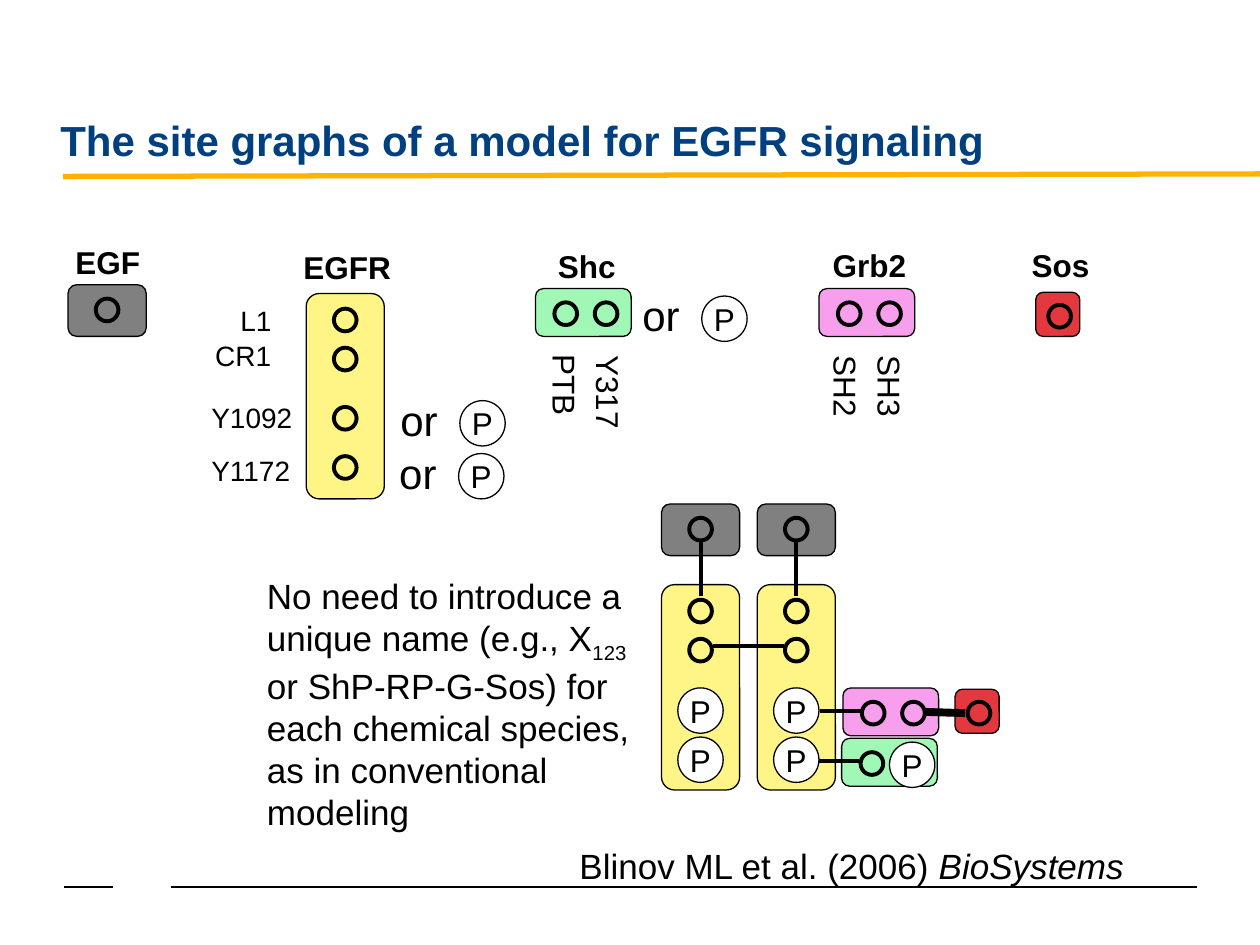
from lxml import etree
from pptx import Presentation
from pptx import util as u
from pptx.dml.color import RGBColor
from pptx.enum import shapes, text
from pptx.oxml.ns import qn

COLORS = {
    "black": "000000", "white": "FFFFFF", "title": "004080", "rule": "FFB300",
    "gray": "808080", "yellow": "FFF587", "green": "A0F7B6",
    "pink": "F79FED", "red": "E3383D",
}
FONT = "Arial"
SITE_SIZE, PHOSPHATE_SIZE = 0.18, 0.36

# Protein kinds: fill, size, centres of the binding sites within the body
PROTEINS = {
    "EGF": ("gray", (0.62, 0.41), [(0.31, 0.2)]),
    "EGFR": ("yellow", (0.62, 1.63),
             [(0.31, 0.21), (0.31, 0.52), (0.31, 0.99), (0.31, 1.38)]),
    "Shc": ("green", (0.76, 0.38), [(0.24, 0.2), (0.56, 0.2)]),
    "Grb2": ("pink", (0.76, 0.38), [(0.24, 0.2), (0.56, 0.2)]),
    "Sos": ("red", (0.35, 0.35), [(0.19, 0.19)]),
}

# Kind, left, top, indexes of phosphorylated sites
LEGEND = [
    ("EGF", 0.54, 2.26, ()), ("EGFR", 2.43, 2.33, ()), ("Shc", 4.25, 2.29, ()),
    ("Grb2", 6.5, 2.29, ()), ("Sos", 8.22, 2.32, ()),
]
COMPLEX = [
    ("EGFR", 5.25, 4.64, (2, 3)), ("EGF", 5.25, 4, ()),
    ("EGFR", 6.01, 4.64, (2, 3)), ("EGF", 6.01, 4, ()),
    ("Shc", 6.68, 5.86, (1,)), ("Grb2", 6.69, 5.46, ()), ("Sos", 7.58, 5.47, ()),
]

# Start, end, width in points
BONDS = [
    ((5.56, 4.29), (5.56, 4.73), 2.25), ((6.32, 4.29), (6.32, 4.73), 2.25),
    ((5.66, 5.13), (6.22, 5.13), 2.25), ((6.5, 6.04), (6.82, 6.04), 2.25),
    ((6.51, 5.64), (6.84, 5.64), 2.25), ((7.34, 5.65), (7.66, 5.66), 4.5),
]
RULES = [
    ((1.36, 7.04), (9.5, 7.04), 0.75, "black"),
    ((0.51, 7.04), (0.9, 7.04), 0.75, "black"),
    ((0.5, 1.4), (10, 1.38), 3, "rule"),
]

# Label, left, top, width
NAMES = [
    ("EGF", 0.5, 1.88, 0.72), ("EGFR", 2.31, 1.92, 0.92), ("Shc", 4.33, 1.91, 0.66),
    ("Grb2", 6.51, 1.9, 0.82), ("Sos", 8.09, 1.9, 0.66),
]
SITE_LABELS = [
    ("L1", 1.81, 2.36, 0.45), ("CR1", 1.61, 2.64, 0.65),
    ("Y1092", 1.58, 3.13, 0.84), ("Y1172", 1.58, 3.55, 0.84),
]
TURNED_LABELS = [
    ("PTB", 4.14, 2.86, 0.69), ("Y317", 4.42, 2.93, 0.82),
    ("SH2", 6.37, 2.87, 0.69), ("SH3", 6.72, 2.87, 0.69),
]
ALTERNATIVES = [(3.08, 3.08), (3.07, 3.5), (5, 2.25)]  # places of "or"
PHOSPHATE_OFFSET = (0.75, 0.28)  # from "or" to the centre of its P

TITLE = "The site graphs of a model for EGFR signaling"
NOTE = [
    ("No need to introduce a unique name (e.g., X", {}),
    ("123", {"baseline": "-25000"}),
    (" or ShP-RP-G-Sos) for each chemical species, as in conventional modeling", {}),
]
CITATION = [("Blinov ML et al. (2006) ", {}), ("BioSystems", {"i": "1"})]


def rgb(name):
    return RGBColor.from_string(COLORS[name])


def write(shape, runs, size, color="black", bold=False):
    paragraph = shape.text_frame.paragraphs[0]
    for words, attributes in runs:
        run = paragraph.add_run()
        run.text = words
        for key, value in {"name": FONT, "size": u.Pt(size), "bold": bold}.items():
            setattr(run.font, key, value)
        run.font.color.rgb = rgb(color)
        for key, value in attributes.items():
            run.font._element.set(key, value)
    return paragraph


def add_text(slide, runs, box, size, wrap=False, rotation=0, anchor="TOP", **style):
    shape = slide.shapes.add_textbox(*map(u.Inches, box))
    shape.rotation = rotation
    frame = shape.text_frame
    frame.word_wrap = wrap
    frame.vertical_anchor = getattr(text.MSO_ANCHOR, anchor)
    if anchor == "TOP":
        frame.auto_size = text.MSO_AUTO_SIZE.SHAPE_TO_FIT_TEXT
    write(shape, runs, size, **style)


def add_body(container, kind, box, fill=None, width=0.75):
    shape = container.shapes.add_shape(kind, *map(u.Inches, box))
    shape.shadow.inherit = False
    if fill:
        shape.fill.solid()
        shape.fill.fore_color.rgb = rgb(fill)
    else:
        shape.fill.background()
    shape.line.color.rgb = rgb("black")
    shape.line.width = u.Pt(width)
    return shape


def add_circle(container, x, y, size, **style):
    box = (x - size / 2, y - size / 2, size, size)
    return add_body(container, shapes.MSO_SHAPE.OVAL, box, **style)


def add_phosphate(container, x, y):
    shape = add_circle(container, x, y, PHOSPHATE_SIZE, fill="white")
    shape.text_frame.word_wrap = False
    shape.text_frame.vertical_anchor = text.MSO_ANCHOR.MIDDLE
    write(shape, [("P", {})], 18).alignment = text.PP_ALIGN.CENTER


def add_protein(slide, kind, left, top, phosphorylated):
    fill, size, sites = PROTEINS[kind]
    container = slide.shapes.add_group_shape() if kind == "EGF" else slide
    body = add_body(container, shapes.MSO_SHAPE.ROUNDED_RECTANGLE,
                    (left, top, *size), fill=fill)
    body.adjustments[0] = 0.167
    for index, (x, y) in enumerate(sites):
        if index in phosphorylated:
            add_phosphate(container, left + x, top + y + 0.01)
        else:
            add_circle(container, left + x, top + y, SITE_SIZE, width=2.25)


def add_line(slide, start, end, width, color="black"):
    line = slide.shapes.add_connector(
        shapes.MSO_CONNECTOR.STRAIGHT, *map(u.Inches, (*start, *end)))
    line.line.color.rgb = rgb(color)
    line.line.width = u.Pt(width)
    etree.SubElement(line._element.spPr, qn("a:effectLst"))


def main():
    presentation = Presentation()
    presentation.slide_width, presentation.slide_height = u.Inches(10), u.Inches(7.5)
    slide = presentation.slides.add_slide(presentation.slide_layouts[6])

    # Frame and title
    for rule in RULES:
        add_line(slide, *rule)
    add_text(slide, [(TITLE, {})], (0.38, 0.44, 9.12, 0.92), 24, wrap=True,
             anchor="BOTTOM", color="title", bold=True)

    # Proteins and the bonds of the complex
    for protein in LEGEND + COMPLEX:
        add_protein(slide, *protein)
    for bond in BONDS:
        add_line(slide, *bond)

    # Labels
    for labels, size, height, style in (
        (NAMES, 18, 0.4, {"bold": True}),
        (SITE_LABELS, 16, 0.37, {}),
        (TURNED_LABELS, 18, 0.4, {"rotation": 90}),
    ):
        for label, left, top, width in labels:
            add_text(slide, [(label, {})], (left, top, width, height), size, **style)

    # Phosphorylated alternatives
    for left, top in ALTERNATIVES:
        add_text(slide, [("or", {})], (left, top, 0.5, 0.5), 24)
        add_phosphate(slide, left + PHOSPHATE_OFFSET[0], top + PHOSPHATE_OFFSET[1])

    # Note and citation
    add_text(slide, CITATION, (4.5, 6.65, 5.08, 0.6), 20, wrap=True)
    add_text(slide, NOTE, (2.02, 4.51, 3.25, 2.12), 20, wrap=True)

    presentation.save("out.pptx")


if __name__ == "__main__":
    main()
